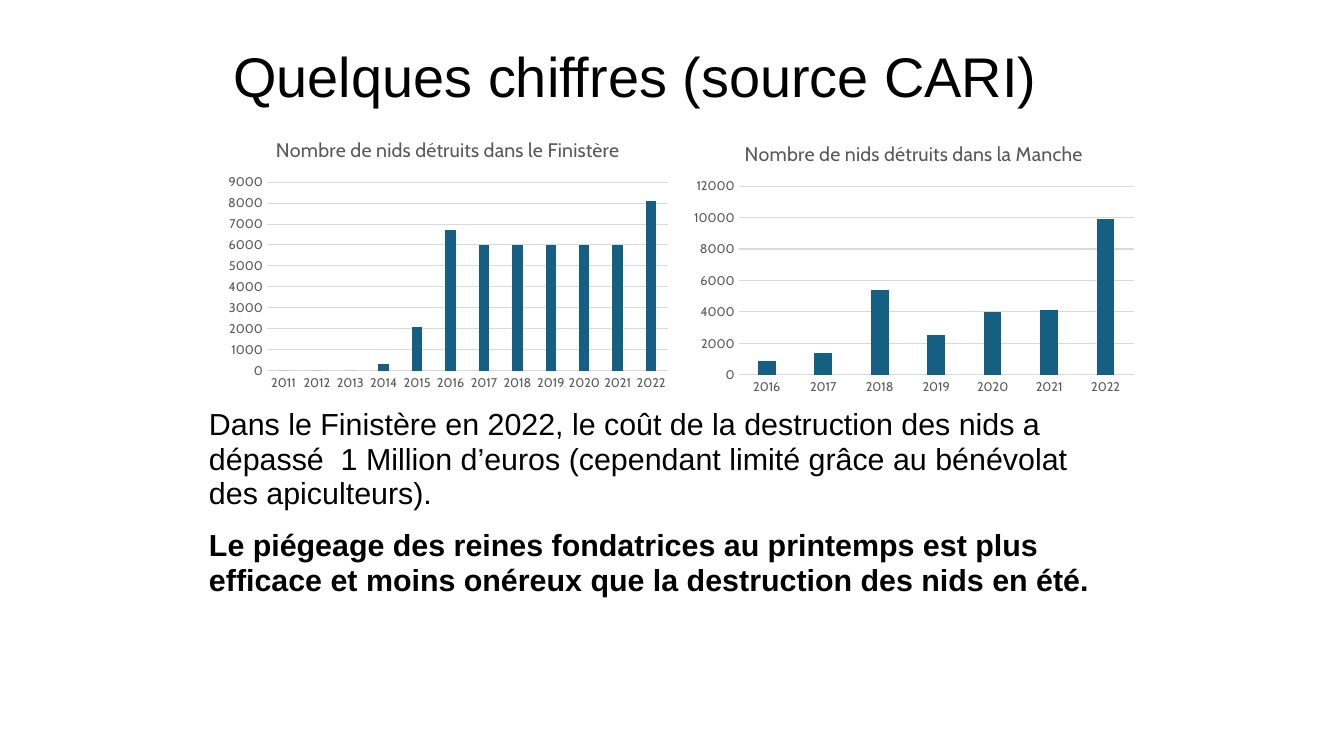
"""Build a slide with two nest-count column charts and a short conclusion."""
from pptx import Presentation
from pptx.chart.data import CategoryChartData
from pptx.dml.color import RGBColor
from pptx.enum.chart import XL_CHART_TYPE as ChartType, XL_TICK_MARK as Tick
from pptx.enum.text import MSO_ANCHOR as Anchor, PP_ALIGN as Align
from pptx.util import Emu, Pt

PX = 914400 / 100.8
SLIDE_SIZE = (1344, 756)
BLACK, GREY, GRID, BLUE = "000000", "595959", "D9D9D9", "156082"

TITLE = "Quelques chiffres (source CARI)"
TITLE_AREA = (182, 12, 907, 126)
BODY_AREA = (209, 408, 907, 227)
BODY = [
    ("Dans le Finistère en 2022, le coût de la destruction des nids a dépassé  "
     "1 Million d’euros (cependant limité grâce au bénévolat des apiculteurs).", False),
    ("Le piégeage des reines fondatrices au printemps est plus efficace et moins "
     "onéreux que la destruction des nids en été.", True),
]
CHART_SIZE = (458, 274)
CHARTS = [
    {"title": "Nombre de nids détruits dans le Finistère", "at": (219, 122),
     "first_year": 2011, "top": 9000, "step": 1000,
     "nests": (0, 0, 0, 300, 2100, 6700, 6000, 6000, 6000, 6000, 6000, 8100)},
    {"title": "Nombre de nids détruits dans la Manche", "at": (685, 126),
     "first_year": 2016, "top": 12000, "step": 2000,
     "nests": (900, 1400, 5400, 2500, 4000, 4100, 9900)},
]


def px(*lengths):
    return [Emu(round(length * PX)) for length in lengths]


def color(hex_code):
    return RGBColor.from_string(hex_code)


def style_font(font, name, size, hex_code, bold=False):
    font.name, font.size, font.bold = name, Pt(size), bold
    font.color.rgb = color(hex_code)


def style_line(line):
    line.color.rgb = color(GRID)
    line.width = Pt(0.75)


def add_text(page, area, paragraphs, size, anchor=Anchor.TOP, align=Align.LEFT):
    frame = page.shapes.add_textbox(*px(*area)).text_frame
    frame.word_wrap = True
    frame.vertical_anchor = anchor
    frame.margin_left = frame.margin_right = frame.margin_top = frame.margin_bottom = 0
    for index, (text, bold) in enumerate(paragraphs):
        para = frame.add_paragraph() if index else frame.paragraphs[0]
        para.alignment = align
        span = para.add_run()
        span.text = text
        style_font(span.font, "Arial", size, BLACK, bold)
    return frame


def add_nest_chart(page, content):
    data = CategoryChartData()
    first = content["first_year"]
    data.categories = [str(first + offset) for offset in range(len(content["nests"]))]
    data.add_series(content["title"], content["nests"])
    chart = page.shapes.add_chart(
        ChartType.COLUMN_CLUSTERED, *px(*content["at"], *CHART_SIZE), data).chart
    style_font(chart.font, "Cabin", 10, BLACK)
    chart.has_legend = False

    span = chart.chart_title.text_frame.paragraphs[0].add_run()
    span.text = content["title"]
    style_font(span.font, "Cabin", 14, GREY)
    chart.chart_title.include_in_layout = False

    plot = chart.plots[0]
    plot.gap_width, plot.overlap, plot.vary_by_categories = 219, -27, False
    fill = plot.series[0].format.fill
    fill.solid()
    fill.fore_color.rgb = color(BLUE)

    years, counts = chart.category_axis, chart.value_axis
    for axis in (years, counts):
        axis.major_tick_mark = axis.minor_tick_mark = Tick.NONE
        style_font(axis.tick_labels.font, "Cabin", 9, GREY)
    style_line(years.format.line)
    counts.format.line.fill.background()
    counts.minimum_scale, counts.maximum_scale = 0, content["top"]
    counts.major_unit = content["step"]
    counts.has_major_gridlines = True
    style_line(counts.major_gridlines.format.line)


def main():
    deck = Presentation()
    deck.slide_width, deck.slide_height = px(*SLIDE_SIZE)
    page = deck.slides.add_slide(deck.slide_layouts[6])
    add_text(page, TITLE_AREA, [(TITLE, False)], 39.9, Anchor.MIDDLE, Align.CENTER)
    body = add_text(page, BODY_AREA, BODY, 21.7)
    for para in body.paragraphs:
        para.line_spacing = 0.95
        para.space_after = Pt(12.2)
    for content in CHARTS:
        add_nest_chart(page, content)
    deck.save("out.pptx")


if __name__ == "__main__":
    main()
